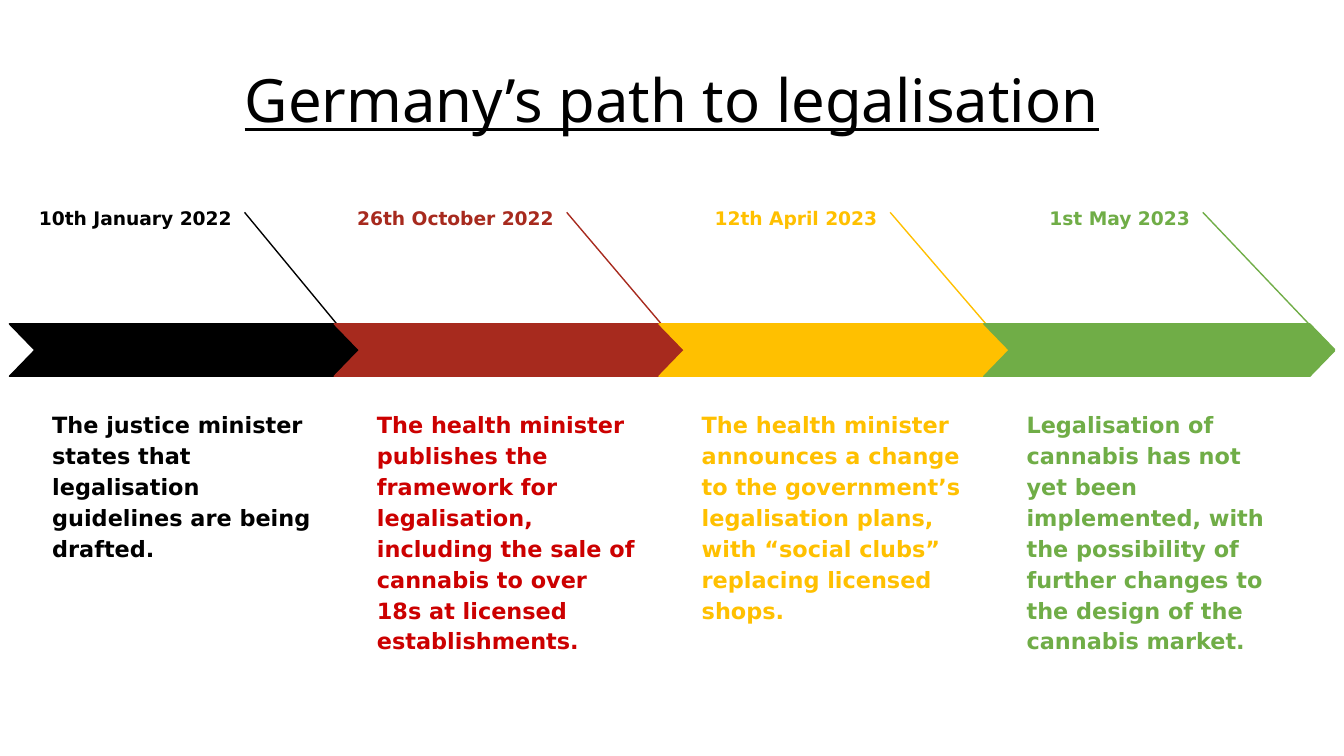
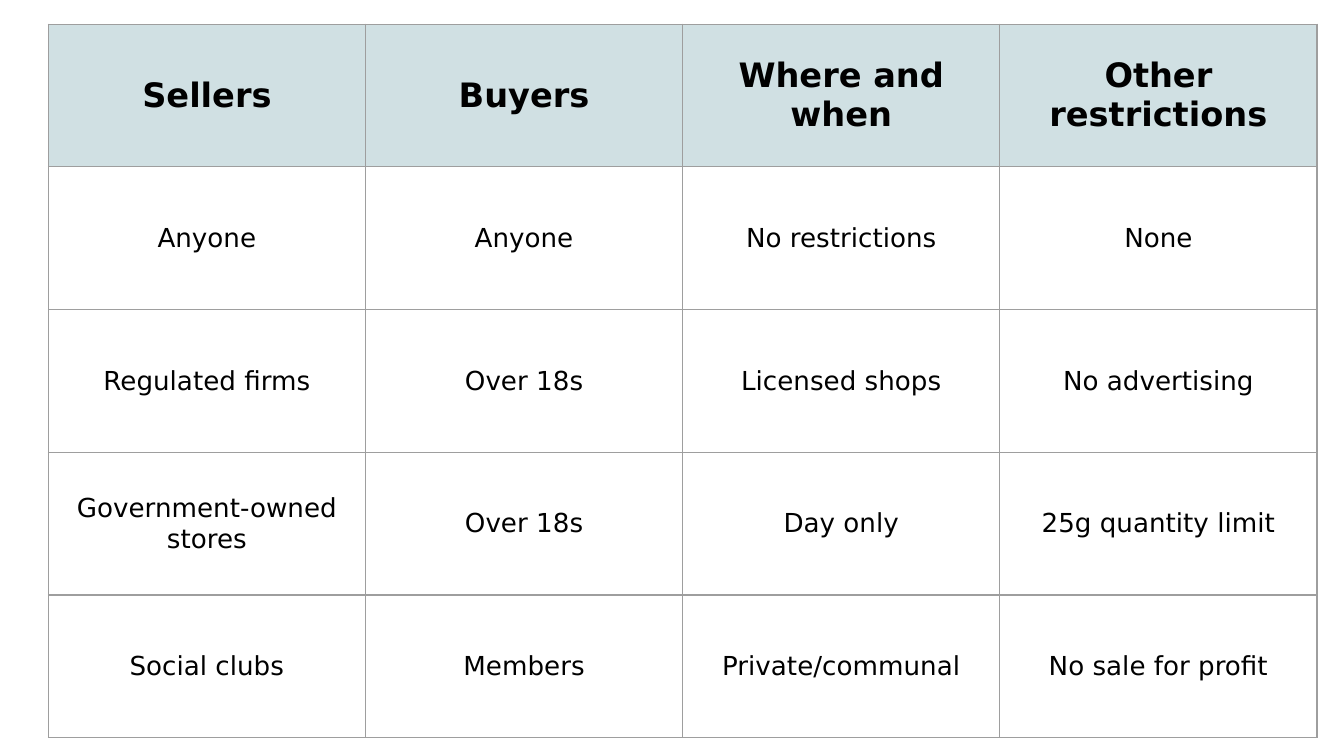
from lxml import etree
from pptx import Presentation
from pptx.dml.color import RGBColor
from pptx.enum.shapes import MSO_CONNECTOR, MSO_SHAPE
from pptx.enum.text import MSO_ANCHOR, PP_ALIGN
from pptx.oxml.ns import qn
from pptx.util import Inches, Pt

LEFT, CENTER, RIGHT = PP_ALIGN.LEFT, PP_ALIGN.CENTER, PP_ALIGN.RIGHT
MIDDLE = MSO_ANCHOR.MIDDLE
STRAIGHT = MSO_CONNECTOR.STRAIGHT
PARALLELOGRAM = MSO_SHAPE.PARALLELOGRAM
TITLE_ONLY, BLANK = 5, 6

BLACK = RGBColor(0x00, 0x00, 0x00)
WHITE = RGBColor(0xFF, 0xFF, 0xFF)
BRICK = RGBColor(0xA7, 0x2A, 0x1E)
RED = RGBColor(0xCC, 0x00, 0x00)
GOLD = RGBColor(0xFF, 0xC0, 0x00)
GREEN = RGBColor(0x70, 0xAD, 0x47)
PALE_TEAL = RGBColor(0xD0, 0xE0, 0xE3)
GREY = RGBColor(0x9E, 0x9E, 0x9E)

PAGE_WIDTH = 10
PAGE_HEIGHT = PAGE_WIDTH * 9 / 16
TITLE_FONT, BODY_FONT = "Noto Sans", "DejaVu Sans"
LINE_WIDTH = Pt(0.75)
MARGINS = dict.fromkeys(
    ("margin_left", "margin_top", "margin_right", "margin_bottom"), Inches(0.1))

TIMELINE_LEFT, TIMELINE_RIGHT, TIMELINE_TOP = 0.07, 9.93, 1.42
ARROW_WIDTH = 2.61

# date, date width, pointer (run, drop), colour, text, text height, text colour
MILESTONES = [
    ("10th January 2022", 1.75, (0.76, 0.92), BLACK,
     "The justice minister states that legalisation guidelines are being "
     "drafted.", 1.92, BLACK),
    ("26th October 2022", 1.73, (0.78, 0.92), BRICK,
     "The health minister publishes the framework for legalisation, including "
     "the sale of cannabis to over 18s at licensed establishments.", 2.21, RED),
    ("12th April 2023", 1.72, (0.79, 0.92), GOLD,
     "The health minister announces a change to the government’s legalisation "
     "plans, with “social clubs” replacing licensed shops.", 1.92, GOLD),
    ("1st May 2023", 1.63, (0.95, 1.0), GREEN,
     "Legalisation of cannabis has not yet been implemented, with the "
     "possibility of further changes to the design of the cannabis market.",
     1.92, GREEN),
]

RULES = [
    ["Sellers", "Buyers", "Where and when", "Other restrictions"],
    ["Anyone", "Anyone", "No restrictions", "None"],
    ["Regulated firms", "Over 18s", "Licensed shops", "No advertising"],
    ["Government-owned stores", "Over 18s", "Day only", "25g quantity limit"],
    ["Social clubs", "Members", "Private/communal", "No sale for profit"],
]


def inches(*lengths):
    return [Inches(length) for length in lengths]


def set_all(target, values):
    for name, value in values.items():
        setattr(target, name, value)


def write(frame, text, layout, size, color, name=BODY_FONT, **style):
    """Put one formatted paragraph into a text frame or cell frame."""
    para = frame.paragraphs[0]
    set_all(para, layout)
    span = para.add_run()
    span.text = text
    set_all(span.font, {"name": name, "size": Pt(size), **style})
    span.font.color.rgb = color


def add_title(page, text):
    title = page.shapes.title
    left, top, width, height = inches(0.69, 0.22, 8.62, 1.09)
    set_all(title, {"left": left, "top": top, "width": width, "height": height})
    set_all(title.text_frame, {"word_wrap": True, "vertical_anchor": MIDDLE})
    write(title.text_frame, text, {"alignment": CENTER, "line_spacing": 0.9},
          32, BLACK, TITLE_FONT, underline=True)


def add_label(shapes, place, text, layout, size, color):
    box = shapes.add_textbox(*inches(*place))
    set_all(box.text_frame, {"word_wrap": True, **MARGINS})
    write(box.text_frame, text, {"line_spacing": 1.15, **layout},
          size, color, bold=True)


def add_pointer(shapes, left, top, run, drop, color):
    line = shapes.add_connector(
        STRAIGHT, *inches(left, top, left + run, top + drop))
    line.line.color.rgb = color
    line.line.width = LINE_WIDTH
    etree.SubElement(line._element.spPr, qn("a:effectLst"))


def add_arrow(shapes, left, top, color):
    """Build a notched arrow from two mirrored parallelograms."""
    for offset, mirrored in ((0, True), (0.2, False)):
        half = shapes.add_shape(
            PARALLELOGRAM, *inches(left, top + offset, ARROW_WIDTH, 0.19))
        half.adjustments[0] = 0.97
        half.shadow.inherit = False
        half.fill.solid()
        half.fill.fore_color.rgb = color
        half.line.color.rgb = color
        half.line.width = LINE_WIDTH
        if mirrored:
            half._element.spPr.xfrm.set("flipH", "1")


def add_milestone(page, left, top, milestone):
    date, date_width, pointer, color, text, text_height, text_color = milestone
    shapes = page.shapes.add_group_shape().shapes
    add_label(shapes, (left, top, date_width, 0.33), date,
              {"alignment": RIGHT, "space_after": Pt(16)}, 10, color)
    add_label(shapes, (left + 0.22, top + 1.51, 2.14, text_height), text,
              {"alignment": LEFT}, 12, text_color)
    add_pointer(shapes, left + date_width, top + 0.16, *pointer, color)
    add_arrow(shapes, left, top + 0.99, color)


def build_timeline_page(deck):
    page = deck.slides.add_slide(deck.slide_layouts[TITLE_ONLY])
    add_title(page, "Germany’s path to legalisation")
    reach = TIMELINE_RIGHT - TIMELINE_LEFT - ARROW_WIDTH
    step = reach / (len(MILESTONES) - 1)
    for index, milestone in enumerate(MILESTONES):
        add_milestone(page, TIMELINE_LEFT + index * step, TIMELINE_TOP, milestone)


def add_borders(cell):
    properties = cell._tc.get_or_add_tcPr()
    for side in ("a:lnL", "a:lnR", "a:lnT", "a:lnB"):
        border = etree.SubElement(properties, qn(side), w=str(int(LINE_WIDTH)))
        fill = etree.SubElement(border, qn("a:solidFill"))
        etree.SubElement(fill, qn("a:srgbClr"), val=str(GREY))


def fill_cell(cell, text, is_header):
    set_all(cell, {"vertical_anchor": MIDDLE, **MARGINS})
    add_borders(cell)
    cell.fill.solid()
    cell.fill.fore_color.rgb = PALE_TEAL if is_header else WHITE
    write(cell.text_frame, text, {"alignment": CENTER},
          18 if is_header else 14, BLACK, bold=is_header)


def add_rules_table(page, left, top, width, height):
    table = page.shapes.add_table(
        len(RULES), len(RULES[0]), *inches(left, top, width, height)).table
    set_all(table, {"first_row": False, "horz_banding": False})
    for row, texts in enumerate(RULES):
        for column, text in enumerate(texts):
            fill_cell(table.cell(row, column), text, row == 0)


def build_rules_page(deck):
    page = deck.slides.add_slide(deck.slide_layouts[BLANK])
    add_rules_table(page, 0.36, 0.18, 9.44, 5.31)


def main():
    deck = Presentation()
    deck.slide_width, deck.slide_height = inches(PAGE_WIDTH, PAGE_HEIGHT)
    build_timeline_page(deck)
    build_rules_page(deck)
    deck.save("out.pptx")


if __name__ == "__main__":
    main()
